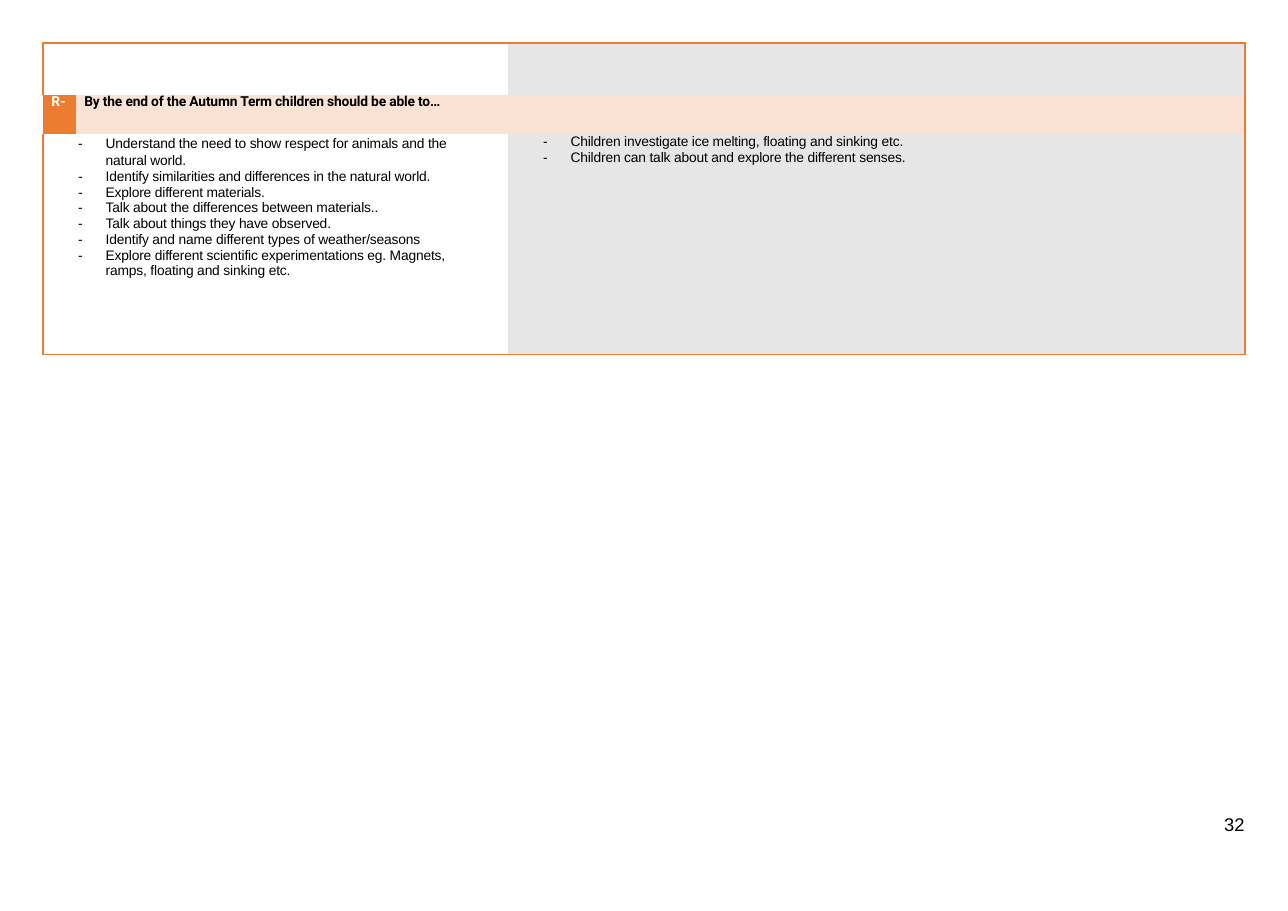
from lxml.etree import SubElement
from pptx import Presentation
from pptx.dml.color import RGBColor
from pptx.oxml.ns import qn
from pptx.util import Pt

COLORS = {
    "orange": "EC7C30",
    "peach": "FAE3D4",
    "grey": "E7E6E6",
    "black": "000000",
    "white": "FFFFFF",
}
COLUMN_WIDTHS = [21.6, 282.2, 481.7]
ROW_HEIGHTS = [33.9, 25.9, 144]

# Each entry: text, line spacing (None keeps single spacing), space before
GOALS = [
    ("Understand the need to show respect for animals and the natural world.", Pt(11), 0.2),
    ("Identify similarities and differences in the natural world.", Pt(10.7), 0),
    ("Explore different materials.", None, 0.2),
    ("Talk about the differences between materials..", None, 0.2),
    ("Talk about things they have observed.", None, 0.2),
    ("Identify and name different types of weather/seasons", None, 0.2),
    ("Explore different scientific experimentations eg. Magnets, "
     "ramps, floating and sinking etc.", 1.02, 0),
]
ACTIVITIES = [
    ("Children investigate ice melting, floating and sinking etc.", None, 0),
    ("Children can talk about and explore the different senses.", None, 0.2),
]


def write(paragraph, text, size=9, font="Arial", color="black", bold=False,
          indent=0, hanging=0, bullet=None, line_spacing=None, before=0, tracking=0):
    """Fill a paragraph; tracking is the letter spacing in points."""
    paragraph.space_before = Pt(before)
    if line_spacing is not None:
        paragraph.line_spacing = line_spacing
    properties = paragraph._p.get_or_add_pPr()
    properties.set("marL", str(Pt(indent)))
    properties.set("indent", str(-Pt(hanging)))
    if bullet:
        SubElement(properties, qn("a:buFont")).set("typeface", font)
        SubElement(properties, qn("a:buChar")).set("char", bullet)
    run = paragraph.add_run()
    run.text = text
    run.font.size = Pt(size)
    run.font.name = font
    run.font.bold = bold
    run.font.color.rgb = RGBColor.from_string(COLORS[color])
    if tracking:
        run.font._element.set("spc", str(round(tracking * 100)))


def write_list(cell, items):
    for number, (text, line_spacing, before) in enumerate(items):
        frame = cell.text_frame
        paragraph = frame.add_paragraph() if number else frame.paragraphs[0]
        write(paragraph, text, indent=41, hanging=18, bullet="-",
              line_spacing=line_spacing, before=before, tracking=-0.1)


def style_cell(cell, sides="", fill=None):
    """Draw the named sides (L, R, T, B) in orange and hide the others."""
    cell.margin_left = cell.margin_right = cell.margin_top = cell.margin_bottom = 0
    properties = cell._tc.get_or_add_tcPr()
    for side in "LRTB":
        border = SubElement(properties, qn(f"a:ln{side}"), w=str(Pt(1)))
        if side in sides:
            solid = SubElement(border, qn("a:solidFill"))
            SubElement(solid, qn("a:srgbClr")).set("val", COLORS["orange"])
        else:
            SubElement(border, qn("a:noFill"))
    if fill:
        cell.fill.solid()
        cell.fill.fore_color.rgb = RGBColor.from_string(COLORS[fill])
    else:
        cell.fill.background()


def add_goals_table(slide, left, top):
    table = slide.shapes.add_table(
        len(ROW_HEIGHTS), len(COLUMN_WIDTHS), Pt(left), Pt(top),
        Pt(sum(COLUMN_WIDTHS)), Pt(sum(ROW_HEIGHTS))).table
    table.first_row = table.horz_banding = False
    for column, width in zip(table.columns, COLUMN_WIDTHS):
        column.width = Pt(width)
    for row, height in zip(table.rows, ROW_HEIGHTS):
        row.height = Pt(height)

    looks = [
        [("LT", None), ("T", None), ("TR", "grey")],
        [("", "orange"), ("R", "peach"), ("R", "peach")],
        [("LB", None), ("B", None), ("RB", "grey")],
    ]
    for row, row_looks in enumerate(looks):
        for column, (sides, fill) in enumerate(row_looks):
            style_cell(table.cell(row, column), sides, fill)
    for row, first in enumerate([0, 1, 0]):
        table.cell(row, first).merge(table.cell(row, first + 1))

    heading = dict(font="Roboto", bold=True, indent=5.4, line_spacing=Pt(10.1))
    write(table.cell(1, 0).text_frame.paragraphs[0], "R-", color="white", **heading)
    write(table.cell(1, 1).text_frame.paragraphs[0],
          "By the end of the Autumn Term children should be able to…",
          tracking=-0.1, **heading)
    goals_cell = table.cell(2, 0)
    goals_cell.margin_right = Pt(22)
    write_list(goals_cell, GOALS)
    write_list(table.cell(2, 2), ACTIVITIES)


def add_page_number(slide, left, top, width, height):
    frame = slide.shapes.add_textbox(Pt(left), Pt(top), Pt(width), Pt(height)).text_frame
    frame.word_wrap = True
    frame.margin_left = frame.margin_right = frame.margin_bottom = 0
    frame.margin_top = Pt(0.7)
    write(frame.paragraphs[0], "32", size=12, indent=3, before=1.1)


def main():
    presentation = Presentation()
    presentation.slide_width = Pt(841.7)
    presentation.slide_height = Pt(595.4)
    slide = presentation.slides.add_slide(presentation.slide_layouts[6])
    add_goals_table(slide, 28.1, 28.1)
    add_page_number(slide, 797, 530.6, 19.5, 16.6)
    presentation.save("out.pptx")


if __name__ == "__main__":
    main()
